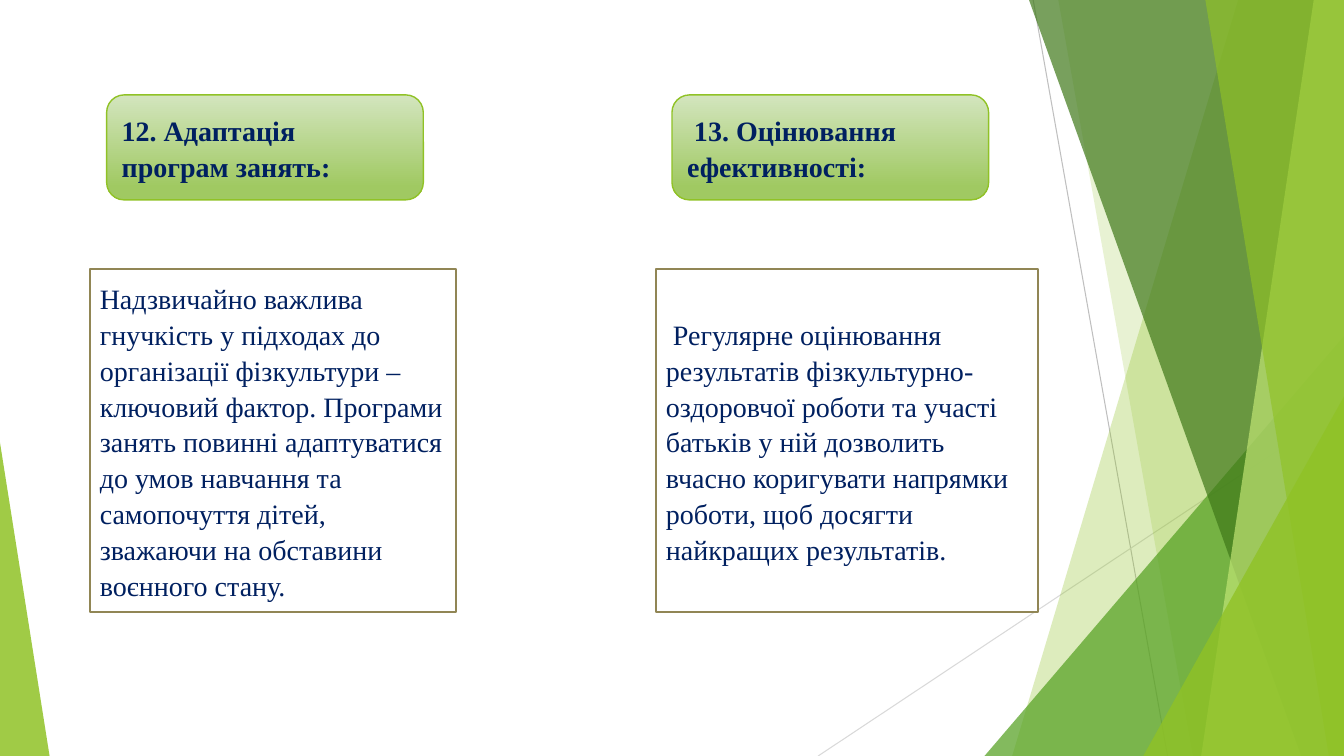
from dataclasses import dataclass

from lxml import etree
from pptx import Presentation
from pptx.dml.color import RGBColor
from pptx.enum.shapes import MSO_CONNECTOR, MSO_SHAPE
from pptx.enum.text import MSO_ANCHOR, PP_ALIGN
from pptx.oxml.ns import qn
from pptx.util import Inches, Pt

STRAIGHT = MSO_CONNECTOR.STRAIGHT
TRIANGLE = MSO_SHAPE.ISOSCELES_TRIANGLE
ROUNDED = MSO_SHAPE.ROUNDED_RECTANGLE
RECTANGLE = MSO_SHAPE.RECTANGLE
MIDDLE = MSO_ANCHOR.MIDDLE
LEFT = PP_ALIGN.LEFT

# The slide is a grid of 16 columns by 9 rows of square cells
COLUMNS, ROWS = 16, 9
SLIDE_WIDTH, SLIDE_HEIGHT = Inches(13.333), Inches(7.5)


@dataclass(frozen=True)
class Theme:
    font: str = "Times New Roman"
    text_size: int = 20
    text: str = "002060"
    paper: str = "FFFFFF"
    lime: str = "90C226"
    pale_lime: str = "C0E474"
    green: str = "54A021"
    dark_green: str = "3F7819"
    heading_top: str = "D3E5BE"
    heading_bottom: str = "A0C962"
    frame: str = "918655"
    grey: str = "BFBFBF"
    light_grey: str = "D9D9D9"


THEME = Theme()

# Background lines: start, end, colour
LINES = [
    ((12.3, 0), (13.9, 9), THEME.grey),
    ((16, 4.84), (9.74, 9), THEME.light_grey),
]

# Facets reach the right edge: top-left column, bottom-left column, colour, opacity.
# Triangles: left, top, width, apex share, colour, opacity. Both from back to front.
BACK_FACETS = [(14.74, 12.05, THEME.lime, 30), (12.6, 14.2, THEME.lime, 20)]
BACK_TRIANGLE = (11.72, 4, 4.28, 1, THEME.green, 72)
FRONT_FACETS = [
    (12.25, 15.49, THEME.dark_green, 70),
    (15.64, 14.3, THEME.pale_lime, 70),
    (14.35, 15.82, THEME.lime, 65),
]
FRONT_TRIANGLES = [
    (13.61, 4.72, 2.39, 1, THEME.lime, 80),
    (0, 5.27, 0.59, 0, THEME.lime, 85),
]

HEADING_TOP, HEADING_WIDTH, HEADING_HEIGHT = 1.13, 3.77, 1.25
BODY_TOP, BODY_HEIGHT = 3.2, 4.09

# Heading column, heading, body column, body width, space after body, body
TOPICS = [
    (1.27, "12. Адаптація програм занять:", 1.07, 4.36, 8,
     "Надзвичайно важлива гнучкість у підходах до організації фізкультури – "
     "ключовий фактор. Програми занять повинні адаптуватися до умов навчання та "
     "самопочуття дітей, зважаючи на обставини воєнного стану."),
    (8, " 13. Оцінювання ефективності:", 7.81, 4.55, 41,
     " Регулярне оцінювання результатів фізкультурно-оздоровчої роботи та участі "
     "батьків у ній дозволить вчасно коригувати напрямки роботи, щоб досягти "
     "найкращих результатів."),
]


def across(columns):
    return round(SLIDE_WIDTH * columns / COLUMNS)


def down(rows):
    return round(SLIDE_HEIGHT * rows / ROWS)


def color(value):
    return RGBColor.from_string(value)


def set_values(target, values):
    for name, value in values.items():
        setattr(target, name, value)


def add_line(slide, start, end, line_color):
    line = slide.shapes.add_connector(
        STRAIGHT, across(start[0]), down(start[1]), across(end[0]), down(end[1]))
    line.line.color.rgb = color(line_color)
    line.line.width = Pt(0.75)
    etree.SubElement(line._element.spPr, qn("a:effectLst"))


def paint(shape, fill_color, opacity):
    shape.shadow.inherit = False
    shape.line.fill.background()
    shape.fill.solid()
    shape.fill.fore_color.rgb = color(fill_color)
    color_node = shape._element.spPr.find(qn("a:solidFill"))[0]
    etree.SubElement(color_node, qn("a:alpha"), val=str(opacity * 1000))


def add_facet(slide, top_left, bottom_left, fill_color, opacity):
    builder = slide.shapes.build_freeform(across(top_left), 0)
    builder.add_line_segments([
        (SLIDE_WIDTH, 0),
        (SLIDE_WIDTH, SLIDE_HEIGHT),
        (across(bottom_left), SLIDE_HEIGHT),
    ], close=True)
    paint(builder.convert_to_shape(), fill_color, opacity)


def add_triangle(slide, left, top, width, apex, fill_color, opacity):
    triangle = slide.shapes.add_shape(
        TRIANGLE, across(left), down(top), across(width), down(ROWS - top))
    triangle.adjustments[0] = apex
    paint(triangle, fill_color, opacity)


def add_box(slide, kind, place, text, line_color, line_width, bold=False, space_after=8):
    left, top, width, height = place
    box = slide.shapes.add_shape(
        kind, across(left), down(top), across(width), down(height))
    box.shadow.inherit = False
    box.line.color.rgb = color(line_color)
    box.line.width = Pt(line_width)
    set_values(box.text_frame, {"word_wrap": True, "vertical_anchor": MIDDLE})
    paragraph = box.text_frame.paragraphs[0]
    set_values(paragraph, {
        "alignment": LEFT,
        "line_spacing": 1.07,
        "space_before": Pt(12),
        "space_after": Pt(space_after),
    })
    run = paragraph.add_run()
    run.text = text
    set_values(run.font, {"name": THEME.font, "size": Pt(THEME.text_size), "bold": bold})
    run.font.color.rgb = color(THEME.text)
    return box


def add_heading(slide, left, text):
    place = (left, HEADING_TOP, HEADING_WIDTH, HEADING_HEIGHT)
    heading = add_box(slide, ROUNDED, place, text, THEME.lime, 1, bold=True)
    heading.fill.gradient()
    heading.fill.gradient_angle = 270
    stops = [(0, THEME.heading_top), (0.88, THEME.heading_bottom)]
    for stop, (position, stop_color) in zip(heading.fill.gradient_stops, stops):
        stop.position = position
        stop.color.rgb = color(stop_color)


def add_body(slide, left, width, text, space_after):
    place = (left, BODY_TOP, width, BODY_HEIGHT)
    body = add_box(slide, RECTANGLE, place, text, THEME.frame, 1.5,
                   space_after=space_after)
    body.fill.solid()
    body.fill.fore_color.rgb = color(THEME.paper)


def add_background(slide):
    for line in LINES:
        add_line(slide, *line)
    for facet in BACK_FACETS:
        add_facet(slide, *facet)
    add_triangle(slide, *BACK_TRIANGLE)
    for facet in FRONT_FACETS:
        add_facet(slide, *facet)
    for triangle in FRONT_TRIANGLES:
        add_triangle(slide, *triangle)


def main():
    presentation = Presentation()
    set_values(presentation, {"slide_width": SLIDE_WIDTH, "slide_height": SLIDE_HEIGHT})
    slide = presentation.slides.add_slide(presentation.slide_layouts[6])

    # Decorative facets
    add_background(slide)

    # Two topics, each a heading above a framed text
    for heading_left, heading, body_left, body_width, space_after, body in TOPICS:
        add_heading(slide, heading_left, heading)
        add_body(slide, body_left, body_width, body, space_after)

    presentation.save("out.pptx")


if __name__ == "__main__":
    main()
